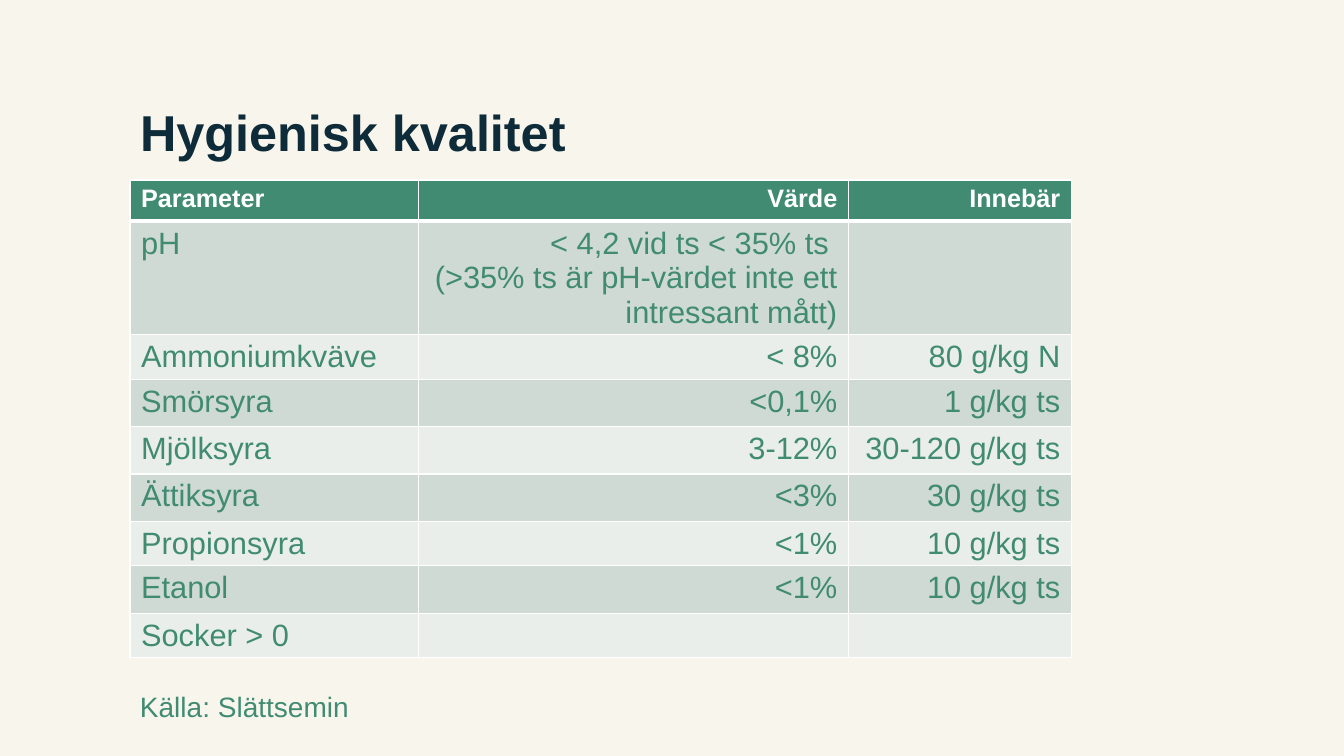
from dataclasses import dataclass

from lxml.etree import SubElement
from pptx import Presentation
from pptx.dml.color import RGBColor
from pptx.enum.text import MSO_ANCHOR, MSO_AUTO_SIZE, PP_ALIGN
from pptx.oxml.ns import qn
from pptx.util import Inches, Pt


@dataclass(frozen=True)
class Theme:
    font: str = "Arial"
    background: str = "F8F5ED"
    ink: str = "0D2B38"
    green: str = "418B73"
    white: str = "FFFFFF"
    bands: tuple = ("CFDAD5", "E9EEEB")
    title_size: int = 36
    header_size: int = 18
    body_size: int = 22
    source_size: int = 20
    border: int = 1
    header_border: int = 3


THEME = Theme()
SLIDE_WIDTH, SLIDE_HEIGHT = Inches(13.33), Inches(7.5)

# Left, top, width and height in percent of the slide
LEFT = 9.68
TITLE_BOX = (LEFT, 11.07, 66.54, 11.07)
TABLE_BOX = (LEFT, 23.8, 70.04, 63.07)
SOURCE_BOX = (LEFT, 90.53, 18.98, 5.87)

# Relative sizes within the table
COLUMN_SHARES = (2.86, 4.26, 2.21)
ROW_SHARES = (41, 112, 44, 47, 47, 47, 44, 47, 44)

# Each cell is a sequence of paragraphs
QUALITY_ROWS = (
    (["Parameter"], ["Värde"], ["Innebär"]),
    (["pH"],
     ["< 4,2 vid ts < 35% ts ", "(>35% ts är pH-värdet inte ett intressant mått)"],
     []),
    (["Ammoniumkväve"], ["< 8%"], ["80 g/kg N"]),
    (["Smörsyra"], ["<0,1%"], ["1 g/kg ts"]),
    (["Mjölksyra"], ["3-12%"], ["30-120 g/kg ts"]),
    (["Ättiksyra"], ["<3%"], ["30 g/kg ts"]),
    (["Propionsyra"], ["<1%"], ["10 g/kg ts"]),
    (["Etanol"], ["<1%"], ["10 g/kg ts"]),
    (["Socker > 0"], [], []),
)


def place(box):
    """Turn percentages of the slide into lengths."""
    extents = (SLIDE_WIDTH, SLIDE_HEIGHT) * 2
    return [int(share * extent / 100) for share, extent in zip(box, extents)]


def add_run(paragraph, text, size, color, bold=False):
    run = paragraph.add_run()
    run.text = text
    run.font.name = THEME.font
    run.font.size = Pt(size)
    run.font.bold = bold
    run.font.color.rgb = RGBColor.from_string(color)


def set_borders(cell, bottom_width):
    """Draw white cell borders; lines must precede the fill in the XML."""
    properties = cell._tc.get_or_add_tcPr()
    for side in "LRTB":
        width = bottom_width if side == "B" else THEME.border
        line = SubElement(properties, qn(f"a:ln{side}"), w=str(Pt(width)))
        fill = SubElement(line, qn("a:solidFill"))
        SubElement(fill, qn("a:srgbClr"), val=THEME.white)


def add_title(slide, box):
    frame = slide.shapes.add_textbox(*place(box)).text_frame
    frame.word_wrap = True
    frame.vertical_anchor = MSO_ANCHOR.BOTTOM
    heading = frame.paragraphs[0]
    heading.line_spacing = 0.9
    add_run(heading, "Hygienisk kvalitet", THEME.title_size, THEME.ink, True)


def fill_cell(cell, paragraphs, row, column):
    is_header = row == 0
    set_borders(cell, THEME.header_border if is_header else THEME.border)
    cell.fill.solid()
    fill = THEME.green if is_header else THEME.bands[(row - 1) % 2]
    cell.fill.fore_color.rgb = RGBColor.from_string(fill)
    cell.margin_left = cell.margin_right = Inches(0.11)
    cell.margin_top = cell.margin_bottom = Inches(0.05)
    size = THEME.header_size if is_header else THEME.body_size
    color = THEME.white if is_header else THEME.green
    frame = cell.text_frame
    for index, text in enumerate(paragraphs):
        paragraph = frame.add_paragraph() if index else frame.paragraphs[0]
        paragraph.alignment = PP_ALIGN.RIGHT if column else PP_ALIGN.LEFT
        add_run(paragraph, text, size, color, is_header)


def add_quality_table(slide, box):
    left, top, width, height = place(box)
    table = slide.shapes.add_table(
        len(ROW_SHARES), len(COLUMN_SHARES), left, top, width, height).table
    table.horz_banding = False
    for column, share in zip(table.columns, COLUMN_SHARES):
        column.width = int(width * share / sum(COLUMN_SHARES))
    for row, share in zip(table.rows, ROW_SHARES):
        row.height = int(height * share / sum(ROW_SHARES))
    for row, cells in enumerate(QUALITY_ROWS):
        for column, paragraphs in enumerate(cells):
            fill_cell(table.cell(row, column), paragraphs, row, column)


def add_source(slide, box):
    frame = slide.shapes.add_textbox(*place(box)).text_frame
    frame.word_wrap = False
    frame.auto_size = MSO_AUTO_SIZE.SHAPE_TO_FIT_TEXT
    add_run(frame.paragraphs[0], "Källa: Slättsemin", THEME.source_size, THEME.green)


def main():
    presentation = Presentation()
    presentation.slide_width = SLIDE_WIDTH
    presentation.slide_height = SLIDE_HEIGHT
    slide = presentation.slides.add_slide(presentation.slide_layouts[6])
    slide.background.fill.solid()
    slide.background.fill.fore_color.rgb = RGBColor.from_string(THEME.background)
    add_quality_table(slide, TABLE_BOX)
    add_title(slide, TITLE_BOX)
    add_source(slide, SOURCE_BOX)
    presentation.save("out.pptx")


if __name__ == "__main__":
    main()
